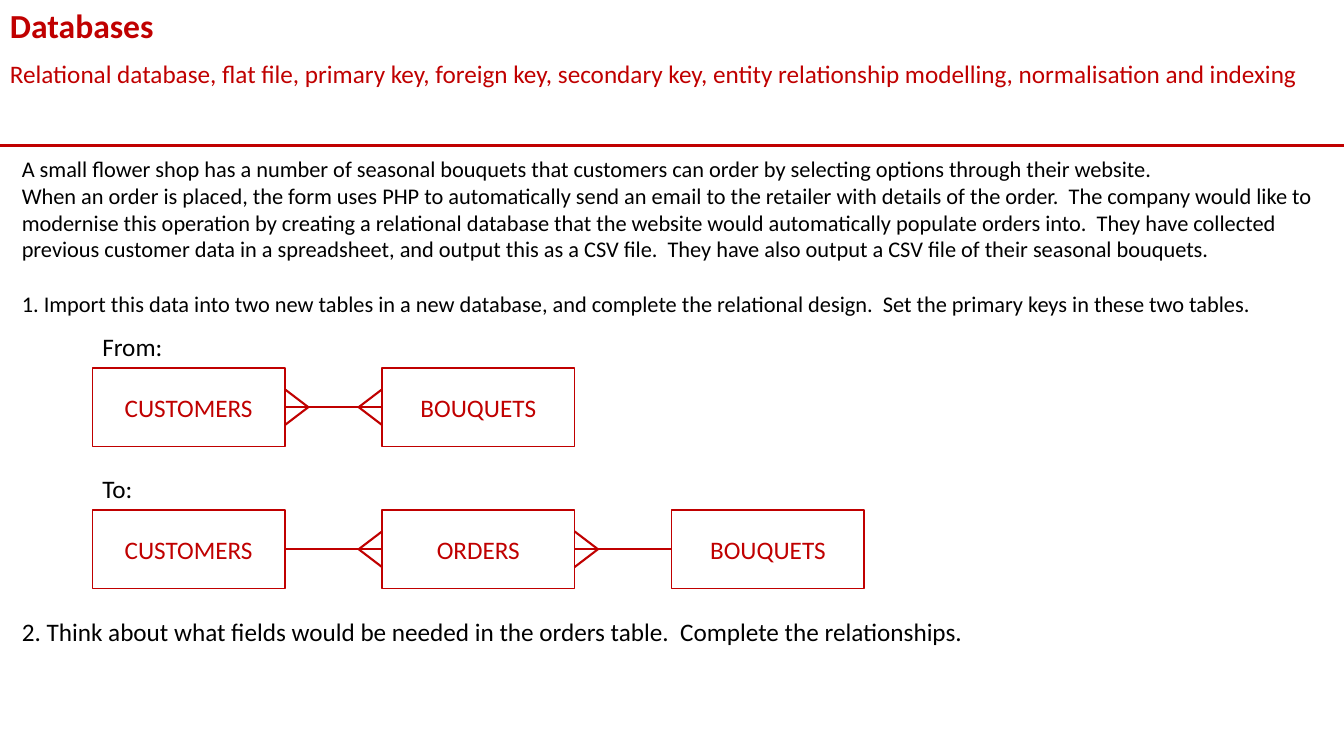
from dataclasses import dataclass

from lxml import etree
from pptx import Presentation
from pptx.dml.color import RGBColor
from pptx.enum.shapes import MSO_CONNECTOR, MSO_SHAPE
from pptx.enum.text import MSO_ANCHOR, PP_ALIGN
from pptx.oxml.ns import qn
from pptx.util import Cm, Pt

STRAIGHT = MSO_CONNECTOR.STRAIGHT
RECTANGLE = MSO_SHAPE.RECTANGLE
LEFT, CENTER = PP_ALIGN.LEFT, PP_ALIGN.CENTER
TOP, MIDDLE = MSO_ANCHOR.TOP, MSO_ANCHOR.MIDDLE
LEFT_SIDE, RIGHT_SIDE = 1, 3


@dataclass(frozen=True)
class Theme:
    font: str = "Calibri"
    accent: RGBColor = RGBColor(0xC0, 0x00, 0x00)
    ink: RGBColor = RGBColor(0x00, 0x00, 0x00)
    paper: RGBColor = RGBColor(0xFF, 0xFF, 0xFF)
    title: float = 24
    body: float = 18
    brief: float = 16
    rule: float = 2.25
    relation: float = 1.5
    outline: float = 1


THEME = Theme()
PAGE_WIDTH, PAGE_HEIGHT = 33.87, 19.05

TITLE = "Databases"
TOPICS = ("Relational database, flat file, primary key, foreign key, secondary key, "
          "entity relationship modelling, normalisation and indexing")
SCENARIO = [
    "A small flower shop has a number of seasonal bouquets that customers can order "
    "by selecting options through their website.",
    "When an order is placed, the form uses PHP to automatically send an email to the "
    "retailer with details of the order.  The company would like to modernise this "
    "operation by creating a relational database that the website would automatically "
    "populate orders into.  They have collected previous customer data in a "
    "spreadsheet, and output this as a CSV file.  They have also output a CSV file of "
    "their seasonal bouquets.",
]
TASK_IMPORT = ("1. Import this data into two new tables in a new database, and complete the "
               "relational design.  Set the primary keys in these two tables.")
TASK_FIELDS = ("2. Think about what fields would be needed in the orders table.  "
               "Complete the relationships.")

ENTITY_WIDTH, ENTITY_HEIGHT, ENTITY_PITCH = 4.85, 1.98, 7.3
LABEL_HEIGHT = 1.05
FOOT_DEPTH, FOOT_SPREAD = 0.59, 0.45


def write(frame, paragraphs, size=THEME.body, color=THEME.ink, bold=False,
          align=LEFT, anchor=TOP):
    frame.word_wrap = True
    frame.vertical_anchor = anchor
    for index, content in enumerate(paragraphs):
        paragraph = frame.paragraphs[0] if index == 0 else frame.add_paragraph()
        paragraph.alignment = align
        run = paragraph.add_run()
        run.text = content
        run.font.name = THEME.font
        run.font.size = Pt(size)
        run.font.bold = bold
        run.font.color.rgb = color
    return frame


def add_text(slide, left, top, width, height, paragraphs, **style):
    box = slide.shapes.add_textbox(Cm(left), Cm(top), Cm(width), Cm(height))
    return write(box.text_frame, paragraphs, **style)


def add_line(slide, x1, y1, x2, y2, weight=THEME.relation):
    line = slide.shapes.add_connector(STRAIGHT, Cm(x1), Cm(y1), Cm(x2), Cm(y2))
    line.line.color.rgb = THEME.accent
    line.line.width = Pt(weight)
    etree.SubElement(line._element.spPr, qn("a:effectLst"))
    return line


def add_entity(slide, left, top, name):
    entity = slide.shapes.add_shape(RECTANGLE, Cm(left), Cm(top),
                                    Cm(ENTITY_WIDTH), Cm(ENTITY_HEIGHT))
    entity.shadow.inherit = False
    entity.fill.solid()
    entity.fill.fore_color.rgb = THEME.paper
    entity.line.color.rgb = THEME.accent
    entity.line.width = Pt(THEME.outline)
    write(entity.text_frame, [name], color=THEME.accent, align=CENTER, anchor=MIDDLE)
    return entity


def add_crows_foot(slide, edge, middle, direction):
    """Spread two toes onto an entity's edge; direction 1 points right, -1 left."""
    for spread in (-FOOT_SPREAD, FOOT_SPREAD):
        add_line(slide, edge + direction * FOOT_DEPTH, middle, edge, middle + spread)


def add_header(slide, left, top, width, height):
    add_text(slide, left, top, width, 1.27, [TITLE],
             size=THEME.title, color=THEME.accent, bold=True)
    add_text(slide, left, top + 1.35, width, 1.02, [TOPICS], color=THEME.accent)
    add_line(slide, left, top + height, left + width, top + height, THEME.rule)


def add_brief(slide, left, top, width, height):
    frame = add_text(slide, left, top, width, height, SCENARIO + [TASK_IMPORT],
                     size=THEME.brief)
    frame.paragraphs[-1].space_before = Pt(19.5)


def add_relationship_row(slide, left, top, label, names, many_sides):
    """Draw a labelled chain of entities; many_sides holds (left, right) per link."""
    add_text(slide, left, top, ENTITY_WIDTH, LABEL_HEIGHT, [label])
    entity_top = top + LABEL_HEIGHT
    middle = entity_top + ENTITY_HEIGHT / 2
    entities = [add_entity(slide, left + i * ENTITY_PITCH, entity_top, name)
                for i, name in enumerate(names)]
    for i, (many_left, many_right) in enumerate(many_sides):
        start = left + i * ENTITY_PITCH + ENTITY_WIDTH
        end = left + (i + 1) * ENTITY_PITCH
        relation = add_line(slide, start, middle, end, middle)
        relation.begin_connect(entities[i], RIGHT_SIDE)
        relation.end_connect(entities[i + 1], LEFT_SIDE)
        if many_left:
            add_crows_foot(slide, start, middle, 1)
        if many_right:
            add_crows_foot(slide, end, middle, -1)


def main():
    deck = Presentation()
    deck.slide_width, deck.slide_height = Cm(PAGE_WIDTH), Cm(PAGE_HEIGHT)
    slide = deck.slides.add_slide(deck.slide_layouts[6])
    add_header(slide, 0, 0, PAGE_WIDTH, 3.66)
    add_brief(slide, 0.3, 3.78, 33.2, 4.37)
    add_relationship_row(slide, 2.33, 8.22, "From:", ["CUSTOMERS", "BOUQUETS"],
                         [(True, True)])
    add_relationship_row(slide, 2.33, 11.8, "To:", ["CUSTOMERS", "ORDERS", "BOUQUETS"],
                         [(False, True), (True, False)])
    add_text(slide, 0.3, 15.4, 32.87, 1.02, [TASK_FIELDS])
    deck.save("out.pptx")


if __name__ == "__main__":
    main()
